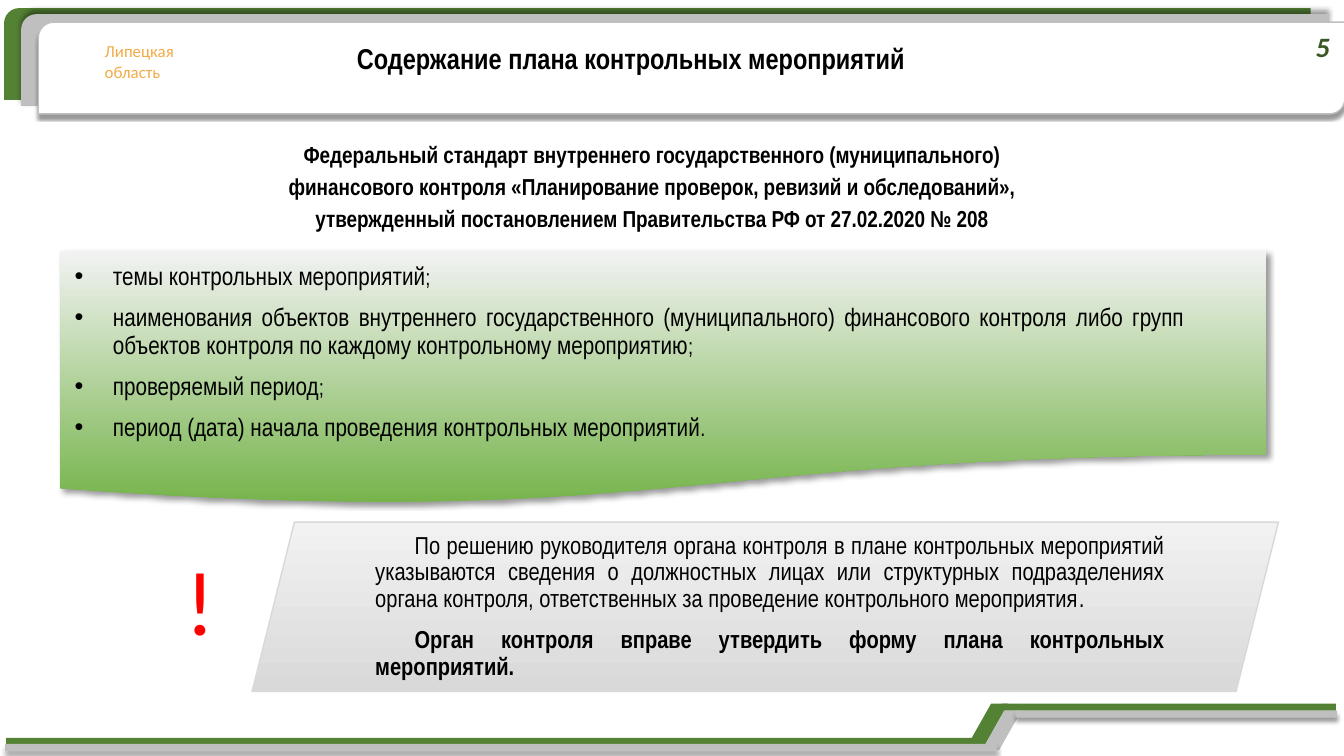
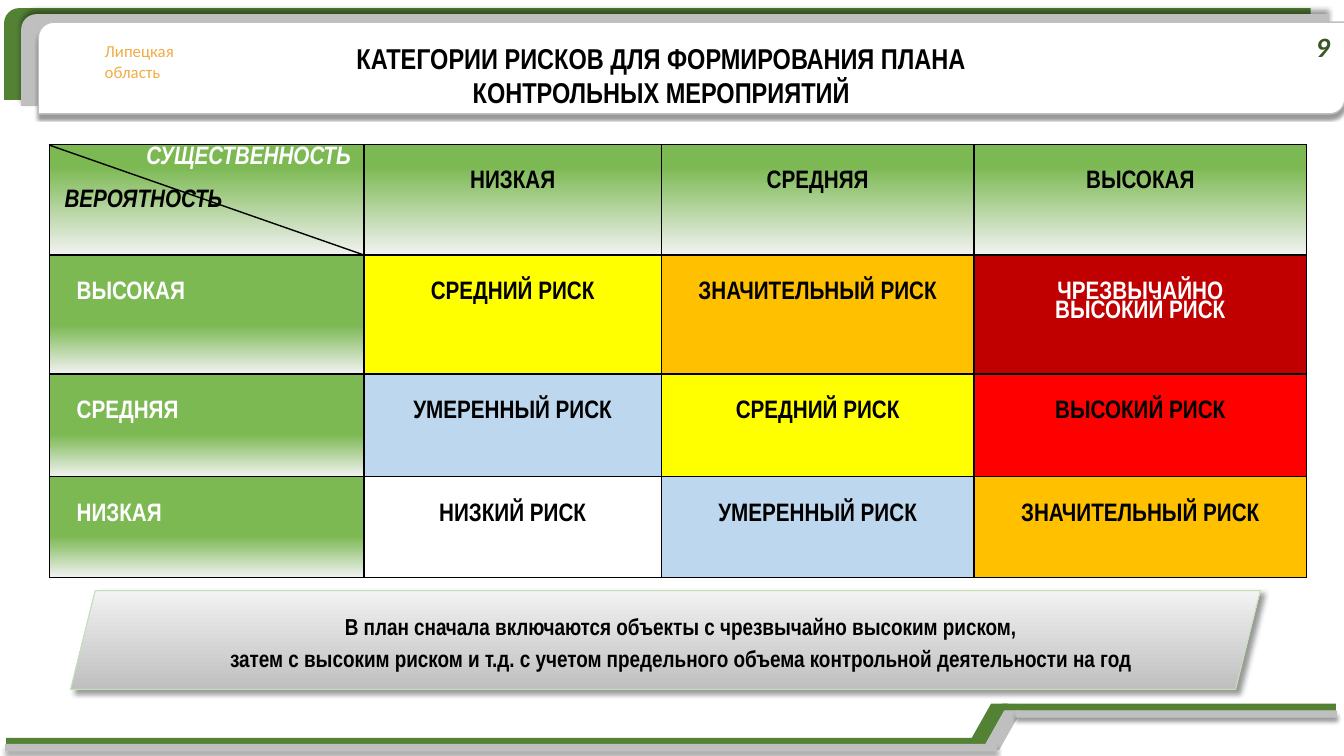
from lxml import etree
from pptx import Presentation
from pptx.dml.color import RGBColor
from pptx.enum.shapes import MSO_CONNECTOR, MSO_SHAPE
from pptx.enum.text import MSO_ANCHOR, MSO_AUTO_SIZE, PP_ALIGN
from pptx.oxml.ns import qn
from pptx.util import Emu, Pt

PX = 9144  # 100 px to the inch
WIDE, HIGH = 1333, 750
LEFT, MID, RIGHT, FULL = PP_ALIGN.LEFT, PP_ALIGN.CENTER, PP_ALIGN.RIGHT, PP_ALIGN.JUSTIFY
TOP, CENTER = MSO_ANCHOR.TOP, MSO_ANCHOR.MIDDLE
RECT, DIAG = MSO_SHAPE.RECTANGLE, MSO_SHAPE.ROUND_2_DIAG_RECTANGLE
SLANT, WAVE = MSO_SHAPE.PARALLELOGRAM, MSO_SHAPE.FLOWCHART_DOCUMENT
LINE = MSO_CONNECTOR.STRAIGHT

GREEN, GRAY, WHITE, BLACK = "548235", "BFBFBF", "FFFFFF", "000000"
PALE, LEAF, SILVER = "F2F2F2", "7CB953", "D9D9D9"
YELLOW, ORANGE, BLUE, RED, DARK = "FFFF00", "FFC000", "BDD7EE", "FF0000", "C00000"
BODY = {"name": "Arial Narrow", "size": 18, "color": BLACK}
BOLD = BODY | {"bold": True}
TITLE = BOLD | {"size": 20.5}
NOTE = BOLD | {"size": 16.5}
TAG = {"name": "Calibri", "size": 12, "color": "F2AC44"}
PAGE = {"name": "Calibri", "size": 20, "color": "385723", "bold": True, "italic": True}
MARK = {"name": "Calibri", "size": 65, "color": RED}
THIN = (4, 4, 4, 4)


def px(*nums):
    return [Emu(n * PX) for n in nums]


def rgb(code):
    return RGBColor.from_string(code)


def paint(fill, look):
    """Fill with a hex colour, or with (low, high, stop) rising from the bottom."""
    if look is None:
        fill.background()
    elif isinstance(look, str):
        fill.solid()
        fill.fore_color.rgb = rgb(look)
    else:
        fill.gradient()
        fill.gradient_angle = 90
        low, high, end = look
        for stop, color, place in zip(fill.gradient_stops, (low, high), (0, end)):
            stop.color.rgb = rgb(color)
            stop.position = place


def style(shape, fill, line=None, shade=None):
    """line is (colour, points); shade is (blur, distance, angle)."""
    paint(shape.fill, fill)
    if line:
        paint(shape.line.fill, line[0])
        shape.line.width = Pt(line[1])
    else:
        shape.line.fill.background()
    shape.shadow.inherit = False
    if shade:
        blur, dist, turn = shade
        list_ = shape._element.spPr.find(qn("a:effectLst"))
        outer = etree.SubElement(list_, qn("a:outerShdw"), blurRad=str(Pt(blur)),
                                 dist=str(Pt(dist)), dir=str(turn * 60000),
                                 algn="ctr", rotWithShape="0")
        color = etree.SubElement(outer, qn("a:srgbClr"), val=BLACK)
        etree.SubElement(color, qn("a:alpha"), val="40000")


def block(slide, kind, box, fill, line=None, shade=None):
    shape = slide.shapes.add_shape(kind, *px(*box))
    style(shape, fill, line, shade)
    return shape


def write(frame, paras, font, indent=None, dot=None, **form):
    """Each paragraph is a string or a list of (text, font changes)."""
    for i, runs in enumerate(paras):
        para = frame.add_paragraph() if i else frame.paragraphs[0]
        props = para._p.get_or_add_pPr()
        if indent:
            for key, num in zip(("marL", "indent"), indent):
                props.set(key, str(num * PX))
        if dot:
            etree.SubElement(props, qn("a:buFont"), typeface="Arial")
            etree.SubElement(props, qn("a:buChar"), char=dot)
        for key, value in form.items():
            if i or key != "space_before":
                setattr(para, key, value)
        for text, change in [(runs, {})] if isinstance(runs, str) else runs:
            run = para.add_run()
            run.text = text
            for key, value in (font | change).items():
                if key == "color":
                    run.font.color.rgb = rgb(value)
                else:
                    setattr(run.font, key, Pt(value) if key == "size" else value)


def setup(frame, anchor, pad=(10, 5, 10, 5)):
    frame.word_wrap = True
    frame.auto_size = MSO_AUTO_SIZE.NONE
    frame.vertical_anchor = anchor
    for side, num in zip(("left", "top", "right", "bottom"), px(*pad)):
        setattr(frame, "margin_" + side, num)
    return frame


def label(slide, box, paras, font, anchor=TOP, pad=(10, 5, 10, 5), **form):
    frame = slide.shapes.add_textbox(*px(*box)).text_frame
    write(setup(frame, anchor, pad), paras, font, **form)


def header(slide, x, y):
    card = (1296, 91)
    block(slide, DIAG, (x, y, *card), GREEN)
    block(slide, DIAG, (x + 17, y + 6, *card), GRAY, None, (4, 3, 270))
    block(slide, DIAG, (x + 34, y + 14, *card), WHITE, (GRAY, 1), (2, 3, 90))
    label(slide, (x + 90, y + 28, 91, 50), ["Липецкая", "область"], TAG)


def footer(slide, x, y):
    """Two stepped ribbons, each a low bar, a slope and a high bar."""
    ribbons = (
        (GREEN, None, 956, 0, (1, 34, 972), (989, 0, 331)),
        (GRAY, (3, 3, 90), 969, 7, (0, 40, 984), (1002, 7, 319)),
    )
    for color, shade, left, top, *bars in ribbons:
        points = [px(x + left + dx, y + top + dy)
                  for dx, dy in ((0, 39), (22, 0), (39, 0), (17, 39))]
        pen = slide.shapes.build_freeform(*points[0])
        pen.add_line_segments(points[1:])
        style(pen.convert_to_shape(), color)
        for bx, by, wide in bars:
            block(slide, RECT, (x + bx, y + by, wide, 7), color, None, shade)


def start(deck, lines, box, page):
    slide = deck.slides.add_slide(deck.slide_layouts[5])
    header(slide, 4, 8)
    footer(slide, 5, 698)
    title = slide.shapes.title
    title.left, title.top, title.width, title.height = px(*box)
    write(setup(title.text_frame, TOP), lines, TITLE, alignment=MID)
    slide.shapes._spTree.append(title._element)
    label(slide, (1298, 27, 28, 37), [page], PAGE, CENTER, (0, 0, 0, 0), alignment=MID)
    return slide


def topics(slide, box):
    items = (
        "темы контрольных мероприятий;",
        "наименования объектов внутреннего государственного (муниципального) финансового "
        "контроля либо групп объектов контроля по каждому контрольному мероприятию;",
        "проверяемый период;",
        "период (дата) начала проведения контрольных мероприятий.",
    )
    shape = block(slide, WAVE, box, ("75B44A", PALE, 1), None, (4, 3, 45))
    write(setup(shape.text_frame, CENTER, (4, 4, 81, 4)),
          [[(item[:-1], {}), (item[-1], {"size": 16})] for item in items],
          BODY, (48, -38), "•", alignment=FULL, line_spacing=0.9, space_before=Pt(10))


def remark(slide, box):
    x, y, _, _ = box
    shape = block(slide, SLANT, box, (SILVER, PALE, 1), (SILVER, 1))
    paras = (
        [("По решению руководителя органа контроля в плане контрольных мероприятий "
          "указываются сведения о должностных лицах или структурных подразделениях органа "
          "контроля, ответственных за проведение контрольного мероприятия", {}),
         (".", {"size": 18})],
        [("Орган контроля вправе утвердить форму плана контрольных мероприятий.",
          {"bold": True})],
    )
    write(setup(shape.text_frame, CENTER), paras, BODY | {"size": 17.5}, (10, 39),
          alignment=FULL, line_spacing=0.9, space_before=Pt(10))
    label(slide, (x - 102, y + 17, 102, 119), ["!"], MARK, alignment=MID)


def cell_box(cell, look, pad):
    props = cell._tc.get_or_add_tcPr()
    for i, side in enumerate(("lnL", "lnR", "lnT", "lnB")):
        edge = etree.Element(qn("a:" + side), w=str(Pt(1)))
        fill = etree.SubElement(edge, qn("a:solidFill"))
        etree.SubElement(fill, qn("a:srgbClr"), val=BLACK)
        props.insert(i, edge)
    paint(cell.fill, look)
    for side, num in zip(("left", "top", "right", "bottom"), px(*pad)):
        setattr(cell, "margin_" + side, num)


def matrix(slide, x, y):
    cols, rows = (312, 295, 310, 330), (110, 118, 102, 100)
    low, fair, mean = ("НИЗКИЙ РИСК", WHITE), ("УМЕРЕННЫЙ РИСК", BLUE), ("СРЕДНИЙ РИСК", YELLOW)
    big, high = ("ЗНАЧИТЕЛЬНЫЙ РИСК", ORANGE), ("ВЫСОКИЙ РИСК", RED)
    peak = ("ЧРЕЗВЫЧАЙНО\nВЫСОКИЙ РИСК", DARK)
    head, side = (PALE, LEAF, 0.8), (PALE, LEAF, 0.41)
    data = (
        (("", head), ("НИЗКАЯ", head), ("СРЕДНЯЯ", head), ("ВЫСОКАЯ", head)),
        (("ВЫСОКАЯ", side), mean, big, peak),
        (("СРЕДНЯЯ", side), fair, mean, high),
        (("НИЗКАЯ", side), low, fair, big),
    )
    table = slide.shapes.add_table(4, 4, *px(x, y, sum(cols), sum(rows))).table
    table.first_row = table.horz_banding = False
    for col, wide in zip(table.columns, cols):
        col.width = Emu(wide * PX)
    for r, (line, tall) in enumerate(zip(data, rows)):
        table.rows[r].height = Emu(tall * PX)
        for c, (text, look) in enumerate(line):
            cell = table.cell(r, c)
            if not text:
                cell_box(cell, look, (15, 5, 13, 5))
                continue
            cell_box(cell, look, (10 if c else 27, 29, 10, 5))
            color = WHITE if look in (side, DARK) else BLACK
            write(cell.text_frame, text.split("\n"), BOLD | {"color": color},
                  alignment=MID if c else LEFT, line_spacing=0.8)
    frame = table.cell(0, 0).text_frame
    axes = ([("СУЩЕСТВЕННОСТЬ", {"color": WHITE})], "ВЕРОЯТНОСТЬ")
    write(frame, axes, BOLD | {"italic": True}, line_spacing=0.8, space_before=Pt(17))
    for para, align in zip(frame.paragraphs, (RIGHT, LEFT)):
        para.alignment = align
    slash = slide.shapes.add_connector(LINE, *px(x, y + 1, x + cols[0], y + rows[0]))
    paint(slash.line.fill, BLACK)
    slash.line.width = Pt(1)
    etree.SubElement(slash._element.spPr, qn("a:effectLst"))


def order(slide, box):
    shape = block(slide, SLANT, box, (GRAY, PALE, 1), ("C5E0B4", 0.75), (4, 3, 45))
    lines = ("В план сначала включаются объекты с чрезвычайно высоким риском,",
             "затем с высоким риском и т.д. с учетом предельного объема контрольной "
             "деятельности на год")
    write(setup(shape.text_frame, CENTER, THIN), lines, NOTE, (30, 0),
          alignment=MID, line_spacing=1.15)


def plan(deck):
    slide = start(deck, ["Содержание плана контрольных мероприятий"],
                  (198, 35, 856, 45), "5")
    remark(slide, (250, 518, 1018, 168))
    topics(slide, (60, 249, 1196, 252))
    lines = ("Федеральный стандарт внутреннего государственного (муниципального)",
             "финансового контроля «Планирование проверок, ревизий и обследований»,",
             "утвержденный постановлением Правительства РФ от 27.02.2020 № 208")
    label(slide, (60, 133, 1173, 99), lines, NOTE, CENTER, THIN,
          alignment=MID, line_spacing=1.15)


def risks(deck):
    slide = start(deck, ["КАТЕГОРИИ РИСКОВ ДЛЯ ФОРМИРОВАНИЯ ПЛАНА", "КОНТРОЛЬНЫХ МЕРОПРИЯТИЙ"],
                  (200, 35, 912, 79), "9")
    matrix(slide, 49, 143)
    order(slide, (70, 586, 1180, 98))


def main():
    deck = Presentation()
    deck.slide_width, deck.slide_height = px(WIDE, HIGH)
    plan(deck)
    risks(deck)
    deck.save("out.pptx")


if __name__ == "__main__":
    main()
